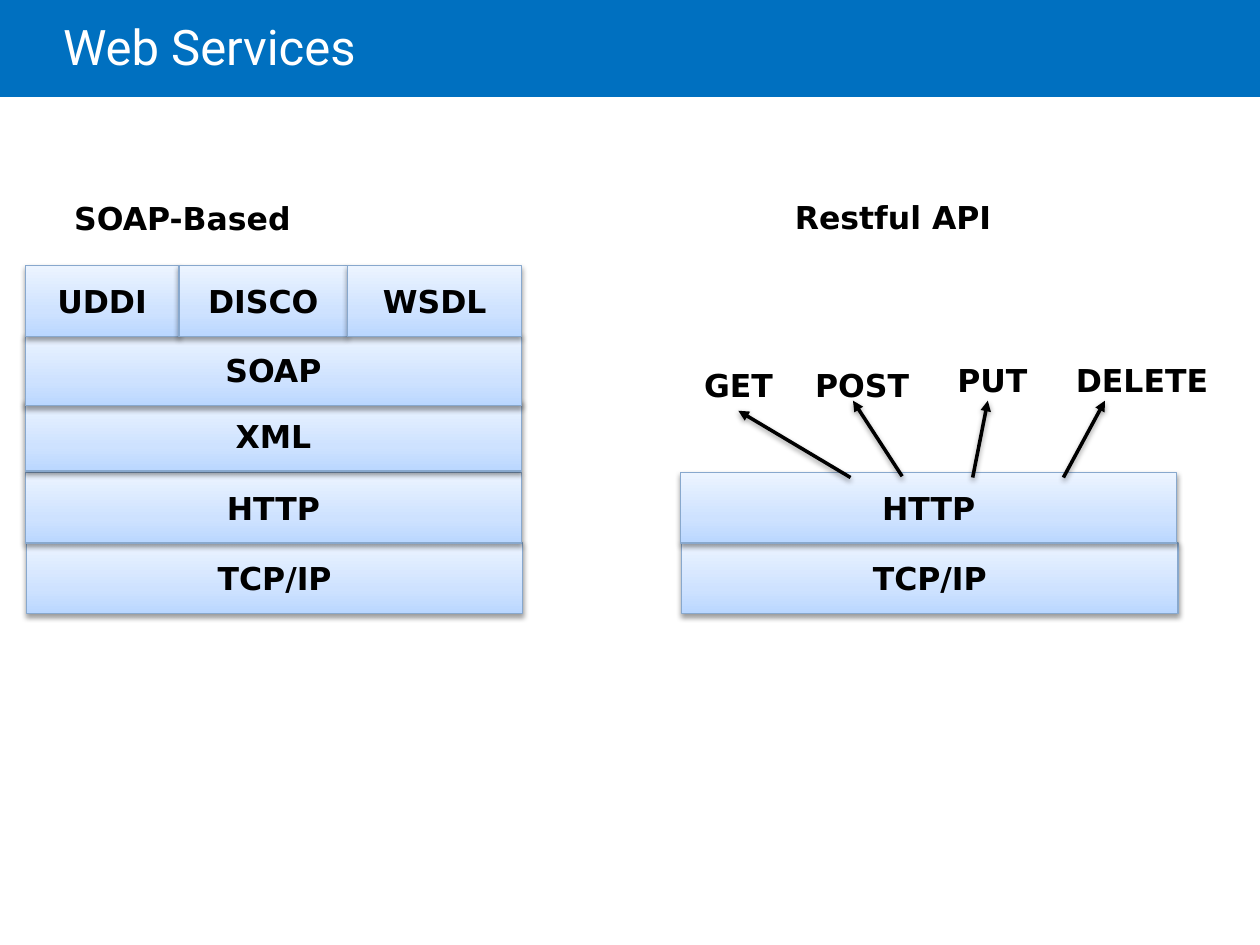
from copy import deepcopy

from pptx import Presentation
from pptx.dml.color import RGBColor
from pptx.enum.shapes import MSO_CONNECTOR, MSO_SHAPE
from pptx.enum.text import MSO_ANCHOR, PP_ALIGN
from pptx.oxml.ns import qn
from pptx.util import Inches, Pt
from lxml.etree import SubElement

COLORS = {
    "header": "0070C0",
    "white": "FFFFFF",
    "black": "000000",
    "border": "88A8CD",
    "block_bottom": "BAD7FF",
    "block_middle": "CEE2FF",
    "block_top": "ECF4FF",
}
BLOCK_STOPS = [(0, "block_bottom"), (0.35, "block_middle"), (1, "block_top")]
BLOCK_HEIGHT = 0.56


def color(name):
    return RGBColor.from_string(COLORS[name])


def write(frame, text, size=18, font="DejaVu Sans", tint="black", bold=True,
          align=PP_ALIGN.LEFT, anchor=MSO_ANCHOR.TOP, wrap=False,
          side=0.1, spacing=None):
    frame.word_wrap = wrap
    frame.vertical_anchor = anchor
    frame.margin_left = frame.margin_right = Inches(side)
    frame.margin_top = frame.margin_bottom = Inches(0.05)
    para = frame.paragraphs[0]
    para.alignment = align
    para.line_spacing = spacing
    span = para.add_run()
    span.text = text
    span.font.size = Pt(size)
    span.font.name = font
    span.font.bold = bold
    span.font.color.rgb = color(tint)


def add_soft_shadow(properties):
    effects = properties.find(qn("a:effectLst"))
    if effects is None:
        effects = SubElement(properties, qn("a:effectLst"))
    shadow = SubElement(effects, qn("a:outerShdw"), blurRad="40000",
                        dist="20000", dir="5400000", rotWithShape="0")
    tint = SubElement(shadow, qn("a:srgbClr"), val=COLORS["black"])
    SubElement(tint, qn("a:alpha"), val="38000")


def fill_block(shape):
    shape.fill.gradient()
    shape.fill.gradient_angle = 90
    stop_list = next(shape._element.spPr.iter(qn("a:gsLst")))
    stop_list.append(deepcopy(stop_list[-1]))
    for stop, (position, name) in zip(shape.fill.gradient_stops, BLOCK_STOPS):
        stop.position = position
        stop.color.rgb = color(name)


def add_header(page, text, width, height):
    bar = page.shapes.add_shape(MSO_SHAPE.RECTANGLE, 0, 0, Inches(width), Inches(height))
    bar.shadow.inherit = False
    bar.fill.solid()
    bar.fill.fore_color.rgb = color("header")
    bar.line.fill.background()
    title = page.shapes.title
    bar._element.addnext(title._element)
    title.left, title.top = Inches(0.5), 0
    title.width, title.height = Inches(8.5), Inches(0.81)
    write(title.text_frame, text, size=28, font="Roboto", tint="white", bold=False,
          anchor=MSO_ANCHOR.MIDDLE, wrap=True, spacing=0.85)
    title.text_frame.margin_left = 0


def add_label(page, text, left, top, width):
    box = page.shapes.add_textbox(Inches(left), Inches(top), Inches(width), Inches(0.4))
    write(box.text_frame, text)


def add_block(group, text, left, top, width):
    shape = group.shapes.add_shape(MSO_SHAPE.RECTANGLE, Inches(left), Inches(top),
                                   Inches(width), Inches(BLOCK_HEIGHT))
    fill_block(shape)
    shape.line.color.rgb = color("border")
    shape.line.width = Pt(0.75)
    shape.shadow.inherit = False
    add_soft_shadow(shape._element.spPr)
    write(shape.text_frame, text, align=PP_ALIGN.CENTER, anchor=MSO_ANCHOR.MIDDLE,
          wrap=True, side=0.2)


def add_transport_stack(page, left, bottom, width):
    group = page.shapes.add_group_shape()
    add_block(group, "TCP/IP", left + 0.01, bottom - BLOCK_HEIGHT, width)
    add_block(group, "HTTP", left, bottom - 2 * BLOCK_HEIGHT, width)
    return group


def add_arrow(page, start, end):
    arrow = page.shapes.add_connector(MSO_CONNECTOR.STRAIGHT,
                                      *(Inches(value) for value in start + end))
    arrow.line.color.rgb = color("black")
    arrow.line.width = Pt(2)
    SubElement(arrow.line._get_or_add_ln(), qn("a:tailEnd"), type="triangle")
    add_soft_shadow(arrow._element.spPr)


def add_soap_side(page, left, bottom, width):
    add_label(page, "SOAP-Based", left + 0.29, 1.53, 1.95)
    group = add_transport_stack(page, left, bottom, width)
    for text, rise in [("XML", 1.69), ("SOAP", 2.21)]:
        add_block(group, text, left, bottom - rise, width)
    cell_left = left
    for text, cell_width in [("UDDI", 1.22), ("DISCO", 1.34), ("WSDL", 1.38)]:
        add_block(group, text, cell_left, bottom - 2.76, cell_width)
        cell_left += cell_width


def add_rest_side(page, left, bottom, width):
    add_label(page, "Restful API", left + 0.81, 1.52, 1.81)
    add_transport_stack(page, left, bottom, width)
    methods = [
        ("GET", 5.49, 2.86, 0.75, (6.75, 3.79), (5.86, 3.26)),
        ("POST", 6.37, 2.86, 0.95, (7.16, 3.78), (6.77, 3.18)),
        ("PUT", 7.5, 2.82, 0.76, (7.72, 3.79), (7.84, 3.18)),
        ("DELETE", 8.44, 2.82, 1.26, (8.44, 3.79), (8.77, 3.18)),
    ]
    for text, label_left, top, label_width, start, end in methods:
        add_label(page, text, label_left, top, label_width)
        add_arrow(page, start, end)


def main():
    deck = Presentation()
    deck.slide_width, deck.slide_height = Inches(10), Inches(7.5)
    page = deck.slides.add_slide(deck.slide_layouts[5])
    add_header(page, "Web Services", 10, 0.77)
    add_soap_side(page, 0.2, 4.87, 3.94)
    add_rest_side(page, 5.4, 4.87, 3.94)
    deck.save("out.pptx")


if __name__ == "__main__":
    main()
